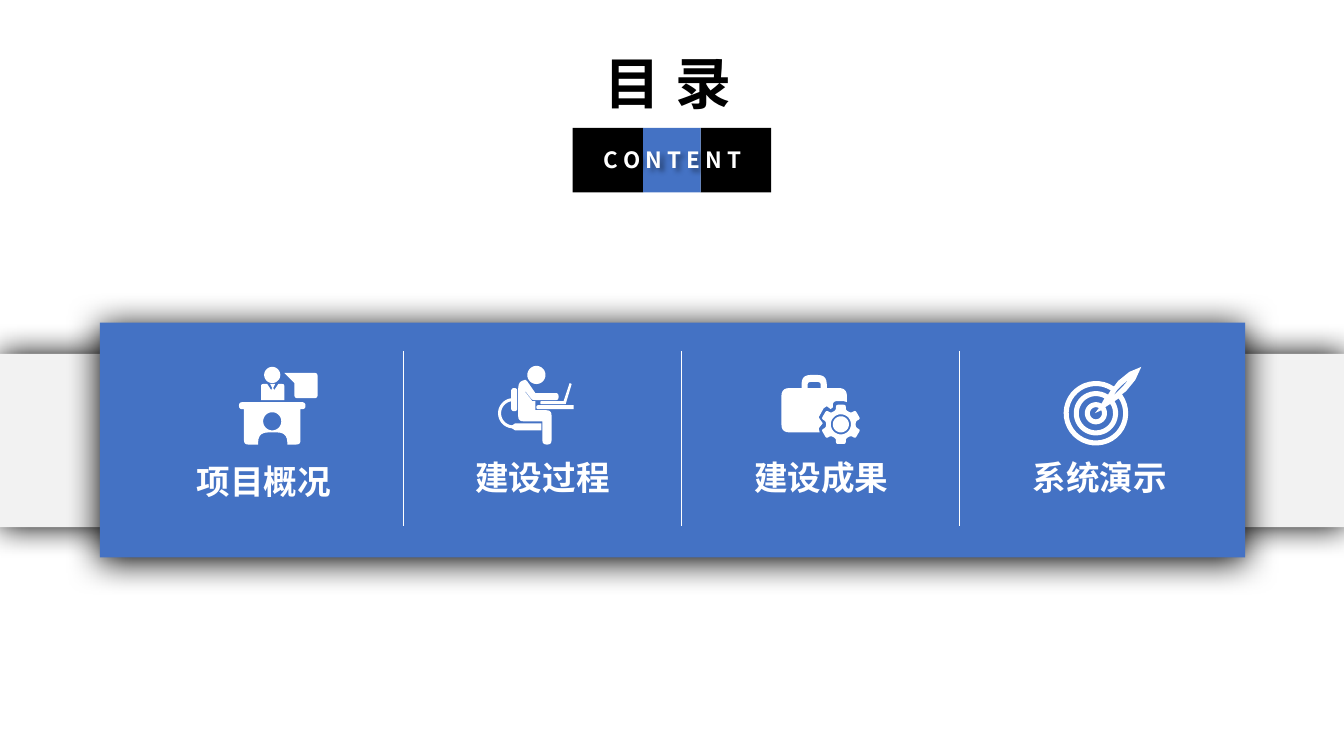
from math import cos, radians, sin

from lxml import etree
from pptx import Presentation
from pptx.dml.color import RGBColor
from pptx.enum import shapes, text
from pptx.oxml.ns import qn
from pptx.util import Inches, Pt

BLACK = RGBColor(0x00, 0x00, 0x00)
WHITE = RGBColor(0xFF, 0xFF, 0xFF)
BLUE = RGBColor(0x44, 0x72, 0xC4)
GRAY = RGBColor(0xF2, 0xF2, 0xF2)
FONT = "Noto Sans CJK SC"


def arc(x, y, radius, start=0, end=360, steps=36):
    """Points of an arc; angles in degrees, clockwise from the right."""
    angles = [radians(start + (end - start) * i / steps) for i in range(steps + 1)]
    return [(x + radius * cos(a), y + radius * sin(a)) for a in angles]


def rounded(*corners):
    """Points of a polygon whose corners are (x, y) or (x, y, radius)."""
    points = []
    for i, (x, y, *radius) in enumerate(corners):
        if not radius:
            points.append((x, y))
            continue
        ends = []
        for near in (corners[i - 1], corners[(i + 1) % len(corners)]):
            dx, dy = near[0] - x, near[1] - y
            length = (dx * dx + dy * dy) ** 0.5
            share = min(radius[0] / length, 1)
            ends.append((x + dx * share, y + dy * share))
        (x1, y1), (x2, y2) = ends
        for t in (0, 0.2, 0.4, 0.6, 0.8, 1):
            a, b, c = (1 - t) ** 2, 2 * t * (1 - t), t * t
            # Weighted between a parabola and the corner to stay near a circle
            points.append((a * x1 + b * x + c * x2, a * y1 + b * y + c * y2))
    return points


presentation = Presentation()
presentation.slide_width, presentation.slide_height = Inches(13.33), Inches(7.5)
slide = presentation.slides.add_slide(presentation.slide_layouts[6])

# Bands and the three blocks behind the subtitle: place, fill, blur, distance
panels = [
    ((0, 3.51, 13.33, 1.72), GRAY, 22, 0),
    ((0.99, 3.2, 11.36, 2.33), BLUE, 25, 3),
    ((5.68, 1.27, 0.7, 0.64), BLACK, 0, 0),
    ((6.95, 1.27, 0.7, 0.64), BLACK, 0, 0),
    ((6.38, 1.27, 0.57, 0.64), BLUE, 0, 0),
]
shadows = []
for place, color, blur, distance in panels:
    panel = slide.shapes.add_shape(shapes.MSO_SHAPE.RECTANGLE, *map(Inches, place))
    panel.fill.solid()
    panel.fill.fore_color.rgb = color
    panel.line.fill.background()
    panel.shadow.inherit = False
    if blur:
        shadows.append((panel, blur, distance, 90, 100))

# Texts: wording, place, size, color, alignment, wrap
LEFT, CENTER = text.PP_ALIGN.LEFT, text.PP_ALIGN.CENTER
labels = [
    ("目", (5.9, 0.43, 0.76, 0.77), 40, BLACK, LEFT, False),
    ("录", (6.6, 0.43, 0.76, 0.77), 40, BLACK, LEFT, False),
    ("C O N T E N T", (5.26, 1.4, 2.82, 0.37), 16, WHITE, CENTER, True),
]
sections = ["项目概况", "建设过程", "建设成果", "系统演示"]
for i, section in enumerate(sections):
    top = 4.48 if i else 4.52
    labels.append((section, (1.84 + 2.765 * i, top, 1.55, 0.5), 24, WHITE, CENTER, False))
for wording, place, size, color, alignment, wrap in labels:
    box = slide.shapes.add_textbox(*map(Inches, place))
    box.text_frame.word_wrap = wrap
    box.text_frame.auto_size = text.MSO_AUTO_SIZE.SHAPE_TO_FIT_TEXT
    paragraph = box.text_frame.paragraphs[0]
    paragraph.alignment = alignment
    run = paragraph.add_run()
    run.text = wording
    for name, value in {"name": FONT, "size": Pt(size), "bold": True}.items():
        setattr(run.font, name, value)
    run.font.color.rgb = color
    etree.SubElement(run.font._element, qn("a:ea"), typeface=FONT)
    if wrap:
        box.shadow.inherit = False
        shadows.append((box, 4, 3, 45, 40))

for shape, blur, distance, angle, alpha in shadows:
    effects = shape._element.spPr.find(qn("a:effectLst"))
    shadow = etree.SubElement(
        effects, qn("a:outerShdw"), blurRad=str(Pt(blur)), dist=str(Pt(distance)),
        dir=str(angle * 60000), algn="ctr", rotWithShape="0")
    shade = etree.SubElement(shadow, qn("a:srgbClr"), val=str(BLACK))
    etree.SubElement(shade, qn("a:alpha"), val=str(alpha * 1000))

for i in range(3):
    x = Inches(4 + 2.76 * i)
    divider = slide.shapes.add_connector(
        shapes.MSO_CONNECTOR.STRAIGHT, x, Inches(3.48), x, Inches(5.22))
    divider.line.color.rgb = WHITE
    divider.line.width = Pt(0.5)
    etree.SubElement(divider._element.spPr, qn("a:effectLst"))

# Icons: each one is a list of outlines; an inner outline cuts a hole
speaker = [
    rounded((2.37, 3.99, 0.035), (3.03, 3.99, 0.035), (3.03, 4.06, 0.035), (2.98, 4.06),
            (2.98, 4.41, 0.04), (2.85, 4.41), (2.85, 4.29, 0.1), (2.56, 4.29, 0.1),
            (2.56, 4.41), (2.42, 4.41, 0.04), (2.42, 4.06), (2.37, 4.06, 0.035)),
    arc(2.7, 4.18, 0.09),
    rounded((2.59, 3.97), (2.59, 3.81, 0.02), (2.65, 3.81), (2.69, 3.87), (2.7, 3.85),
            (2.68, 3.81), (2.73, 3.81), (2.71, 3.85), (2.72, 3.87), (2.76, 3.81),
            (2.82, 3.81, 0.02), (2.82, 3.97)),
    rounded((2.82, 3.7), (3.15, 3.7, 0.03), (3.15, 3.95, 0.03), (2.92, 3.95, 0.03),
            (2.92, 3.8)),
    arc(2.7, 3.72, 0.08),
]
worker = [
    rounded((5.32, 4.02, 0.02), (5.69, 4.02), (5.69, 4.06), (5.32, 4.06, 0.02)),
    rounded((5.07, 3.85, 0.03), (5.13, 3.85, 0.03), (5.13, 4.08, 0.03), (5.07, 4.08, 0.03),
            *arc(5.09, 4.1, 0.12, 260, 95), (5.11, 4.2), (5.37, 4.2), (5.37, 4.27),
            (5.11, 4.27), *arc(5.09, 4.1, 0.15, 95, 262)),
    rounded((5.65, 3.8), (5.67, 3.81), (5.61, 4.01), (5.36, 4.01, 0.01),
            (5.36, 3.98, 0.01), (5.59, 3.98)),
    rounded((5.14, 3.77, 0.08), (5.22, 3.77, 0.02), (5.31, 3.9), (5.54, 3.9, 0.03),
            (5.54, 3.97, 0.03), (5.28, 3.97, 0.02), (5.21, 3.88), (5.21, 3.89),
            (5.28, 3.98), (5.31, 3.98), (5.31, 4.07), (5.47, 4.07, 0.05),
            (5.47, 4.41, 0.04), (5.38, 4.41, 0.04), (5.38, 4.18), (5.14, 4.18, 0.05)),
    arc(5.32, 3.72, 0.09),
]
gear = []
for tooth in range(30, 390, 60):
    for radius, turn in ((0.15, -19), (0.2, -14), (0.2, 14), (0.15, 19)):
        x, y = arc(8.34, 4.21, radius, tooth + turn)[0]
        gear.append((x, y, 0.02))
briefcase = [
    rounded((7.75, 3.85, 0.08), (7.95, 3.85), (7.95, 3.72, 0.09), (8.2, 3.72, 0.09),
            (8.2, 3.85), (8.4, 3.85, 0.08), (8.4, 3.99), (8.37, 3.98), (8.26, 3.98, 0.04),
            (8.26, 4.04), (8.24, 4.06), (8.2, 4.03), (8.17, 4.05), (8.12, 4.14),
            (8.16, 4.2), (8.12, 4.25), (8.13, 4.29), (7.75, 4.29, 0.08)),
    rounded((8.01, 3.79, 0.03), (8.14, 3.79, 0.03), (8.14, 3.85), (8.01, 3.85)),
    rounded(*gear),
    arc(8.34, 4.21, 0.1),
    arc(8.34, 4.21, 0.08),
]
hub = (10.87, 4.1)
target = [
    arc(*hub, 0.32, -36, 304) + [(11.09, 3.78), (11.2, 3.69), (11.32, 3.64),
                                 (11.26, 3.77), (11.17, 3.88)],
    arc(*hub, 0.27, -33, 303) + arc(*hub, 0.22, 303, -33),
    arc(*hub, 0.17, -33, 300) + arc(*hub, 0.11, 300, -33),
    arc(*hub, 0.06, -30, 300) + [(10.86, 4.1)],
    [(11.04, 3.93), (11.08, 3.87), (11.13, 3.82), (11.2, 3.76), (11.14, 3.83),
     (11.09, 3.88)],
]
for outlines in (speaker, worker, briefcase, target):
    builder = None
    for outline in outlines:
        start, *rest = [(Inches(x), Inches(y)) for x, y in outline]
        if builder is None:
            builder = slide.shapes.build_freeform(*start)
        else:
            builder.move_to(*start)
        builder.add_line_segments(rest, close=True)
    icon = builder.convert_to_shape()
    icon.fill.solid()
    icon.fill.fore_color.rgb = WHITE
    icon.line.fill.background()
    icon.shadow.inherit = False

presentation.save("out.pptx")
